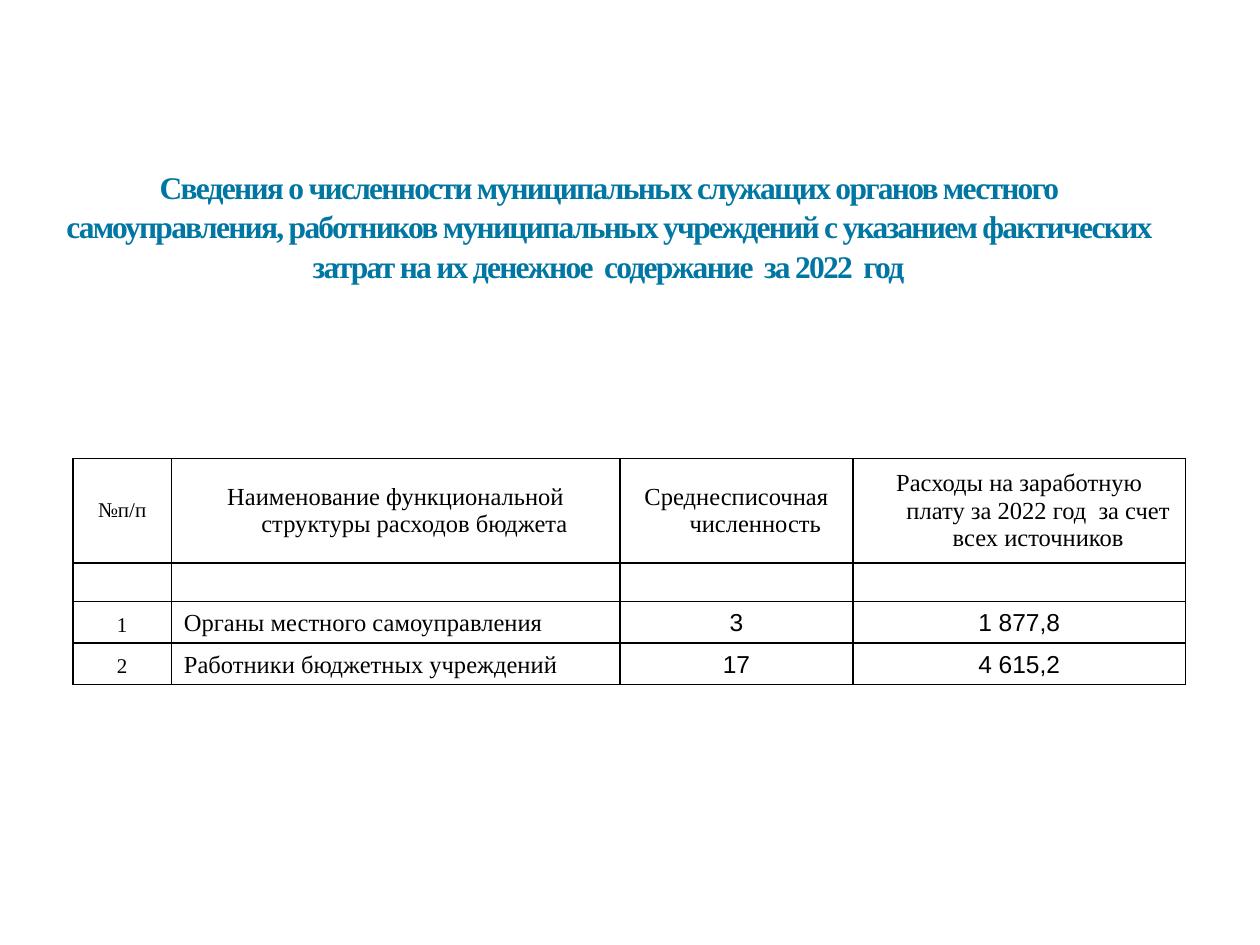
"""Build a slide with a table of municipal staff numbers and payroll costs."""
from pptx import Presentation
from pptx.dml.color import RGBColor
from pptx.enum.text import MSO_ANCHOR, PP_ALIGN
from pptx.oxml import parse_xml
from pptx.oxml.ns import nsdecls, qn
from pptx.util import Inches, Pt

LEFT, CENTER = PP_ALIGN.LEFT, PP_ALIGN.CENTER
MIDDLE, BOTTOM = MSO_ANCHOR.MIDDLE, MSO_ANCHOR.BOTTOM
BLUE = RGBColor(0x00, 0x76, 0xA3)
BLACK = RGBColor(0x00, 0x00, 0x00)
SERIF, SANS = "Times New Roman", "Arial"
COLUMN_WIDTHS = [0.78, 3.56, 1.85, 2.64]
ROW_HEIGHTS = [0.37, 0.47, 0.47, 0.83, 0.3, 0.33, 0.33]
HEADER_ROW = 3
STAFF_ROWS = {
    HEADER_ROW: ["№п/п", "Наименование функциональной структуры расходов бюджета",
                 "Среднесписочная численность",
                 "Расходы на заработную плату за 2022 год  за счет всех источников"],
    5: ["1", "Органы местного самоуправления", "3", "1 877,8"],
    6: ["2", "Работники бюджетных учреждений", "17", "4 615,2"],
}


def set_borders(cell, visible_sides):
    properties = cell._tc.get_or_add_tcPr()
    for side in "LRTB":
        paint = (f'<a:solidFill><a:srgbClr val="{BLACK}"/></a:solidFill>'
                 if side in visible_sides else "<a:noFill/>")
        properties.append(parse_xml(
            f'<a:ln{side} {nsdecls("a")} w="{Pt(1)}">{paint}</a:ln{side}>'))


def style_paragraph(paragraph, font_name, size, color, alignment):
    paragraph.alignment = alignment
    paragraph.font.name = font_name
    paragraph.font.size = Pt(size)
    paragraph.font.color.rgb = color


prs = Presentation()
prs.slide_width, prs.slide_height = Inches(10), Inches(7.5)
slide = prs.slides.add_slide(prs.slide_layouts[5])

title = slide.shapes.title
title.left, title.top = Inches(0.33), Inches(1.25)
title.width, title.height = Inches(9), Inches(1.33)
title.text_frame.text = (
    "Сведения о численности муниципальных служащих органов местного "
    "самоуправления, работников муниципальных учреждений с указанием фактических "
    "затрат на их денежное  содержание  за 2022  год")
title.text_frame.vertical_anchor = BOTTOM
title.text_frame.margin_bottom = Inches(0.32)
heading = title.text_frame.paragraphs[0]
style_paragraph(heading, SERIF, 18, BLUE, CENTER)
heading.font.bold = True
heading.line_spacing = 1.05
heading._p.pPr.find(qn("a:defRPr")).set("spc", "-100")

staff_table = slide.shapes.add_table(
    len(ROW_HEIGHTS), len(COLUMN_WIDTHS), Inches(0.58), Inches(2.33),
    Inches(sum(COLUMN_WIDTHS)), Inches(sum(ROW_HEIGHTS))).table
staff_table.first_row = False
staff_table.horz_banding = False
for column, width in zip(staff_table.columns, COLUMN_WIDTHS):
    column.width = Inches(width)

for row_index, height in enumerate(ROW_HEIGHTS):
    staff_table.rows[row_index].height = Inches(height)
    for column_index in range(len(COLUMN_WIDTHS)):
        cell = staff_table.cell(row_index, column_index)
        if row_index >= HEADER_ROW:
            set_borders(cell, "LRTB")
        else:
            set_borders(cell, "B" if row_index == HEADER_ROW - 1 else "")
        cell.fill.background()
        if row_index not in STAFF_ROWS:
            cell.margin_top = cell.margin_bottom = 0
            continue
        is_header = row_index == HEADER_ROW
        cell.text = STAFF_ROWS[row_index][column_index]
        cell.vertical_anchor = MIDDLE if is_header else BOTTOM
        paragraph = cell.text_frame.paragraphs[0]
        style_paragraph(
            paragraph,
            SANS if column_index >= 2 and not is_header else SERIF,
            12 if column_index == 0 else 14,
            BLACK,
            LEFT if column_index == 1 and not is_header else CENTER)
        indents = paragraph._p.get_or_add_pPr()
        indents.set("marL", str(Inches(0.3)))
        indents.set("indent", str(-Inches(0.3)))

staff_table.cell(0, 0).merge(staff_table.cell(0, 3))

prs.save("out.pptx")
